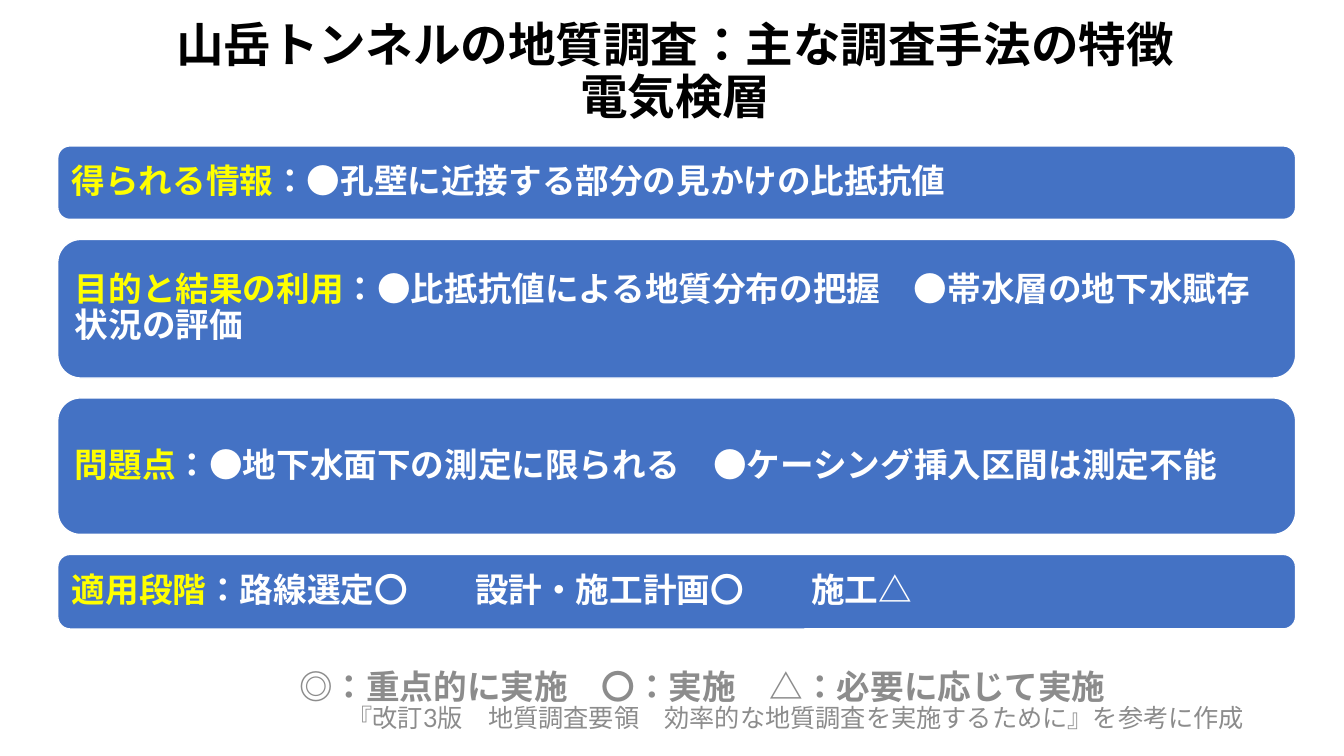
from pptx import Presentation, util as u
from pptx.dml.color import RGBColor
from pptx.enum import lang, shapes, text
from pptx.oxml import ns, xmlchemy

PX = 9525  # EMU per px, slide of 1280 x 720 px
BLACK = RGBColor(0x00, 0x00, 0x00)
WHITE = RGBColor(0xFF, 0xFF, 0xFF)
BLUE = RGBColor(0x44, 0x72, 0xC4)
YELLOW = RGBColor(0xFF, 0xFF, 0x00)
GRAY = RGBColor(0x8C, 0x8C, 0x8C)
LATIN = "Lato"
JAPANESE = "Noto Sans CJK JP"

CARD_LEFT, CARD_TOP, CARD_WIDTH, CARD_GAP = 55, 139, 1179, 19
CARD_INSET = 10
# Height, heading, content
CARDS = [
    (70, "得られる情報", "：●孔壁に近接する部分の見かけの比抵抗値"),
    (132, "目的と結果の利用", "：●比抵抗値による地質分布の把握　●帯水層の地下水賦存状況の評価"),
    (130, "問題点", "：●地下水面下の測定に限られる　●ケーシング挿入区間は測定不能"),
    (71, "適用段階", "：路線選定〇　　設計・施工計画〇　　施工△"),
]


def px(*lengths):
    return [u.Emu(length * PX) for length in lengths]


def set_all(target, values):
    for name, value in values.items():
        setattr(target, name, value)


def add_run(paragraph, words, color, size, bold=True, font=JAPANESE):
    run = paragraph.add_run()
    run.text = words
    set_all(run.font, {"name": font, "size": u.Pt(size), "bold": bold,
                       "language_id": lang.MSO_LANGUAGE_ID.JAPANESE})
    run.font.color.rgb = color
    # East Asian typeface follows the latin one
    east_asian = xmlchemy.OxmlElement("a:ea")
    east_asian.set("typeface", JAPANESE)
    run.font._element.find(ns.qn("a:latin")).addnext(east_asian)


def add_centered_text(slide, box, lines, color, size, bold, font, spacing=1.0):
    frame = slide.shapes.add_textbox(*px(*box)).text_frame
    set_all(frame, {"word_wrap": True, "vertical_anchor": text.MSO_ANCHOR.MIDDLE})
    paragraph = frame.paragraphs[0]
    set_all(paragraph, {"alignment": text.PP_ALIGN.CENTER, "line_spacing": spacing})
    for index, line in enumerate(lines):
        if index:
            paragraph.add_line_break()
        add_run(paragraph, line, color, size, bold, font)


def add_card(slide, top, height, heading, content):
    card = slide.shapes.add_shape(shapes.MSO_SHAPE.ROUNDED_RECTANGLE,
                                  *px(CARD_LEFT, top, CARD_WIDTH, height))
    card.shadow.inherit = False
    card.fill.solid()
    card.fill.fore_color.rgb = BLUE
    card.line.color.rgb = WHITE
    card.line.width = u.Pt(1)
    frame = card.text_frame
    set_all(frame, {"word_wrap": True, "vertical_anchor": text.MSO_ANCHOR.MIDDLE})
    for side in ("left", "top", "right", "bottom"):
        setattr(frame, f"margin_{side}", u.Emu(CARD_INSET * PX))
    paragraph = frame.paragraphs[0]
    set_all(paragraph, {"alignment": text.PP_ALIGN.LEFT, "line_spacing": 0.9})
    add_run(paragraph, heading, YELLOW, 24)
    add_run(paragraph, content, WHITE, 24)


def main():
    presentation = Presentation()
    set_all(presentation, {"slide_width": u.Emu(1280 * PX), "slide_height": u.Emu(720 * PX)})
    slide = presentation.slides.add_slide(presentation.slide_layouts[6])

    # Title
    add_centered_text(slide, (25, 28, 1236, 83),
                      ["山岳トンネルの地質調査：主な調査手法の特徴", "電気検層"],
                      BLACK, 34, True, LATIN, 0.9)

    # Cards, stacked with equal gaps
    top = CARD_TOP
    for height, heading, content in CARDS:
        add_card(slide, top, height, heading, content)
        top += height + CARD_GAP

    # Legend and source
    add_centered_text(slide, (110, 628, 1118, 51),
                      ["◎：重点的に実施　〇：実施　△：必要に応じて実施"],
                      GRAY, 24, True, JAPANESE)
    add_centered_text(slide, (303, 662, 910, 43),
                      ["『改訂3版　地質調査要領　効率的な地質調査を実施するために』を参考に作成"],
                      GRAY, 18, False, LATIN)

    presentation.save("out.pptx")


if __name__ == "__main__":
    main()
